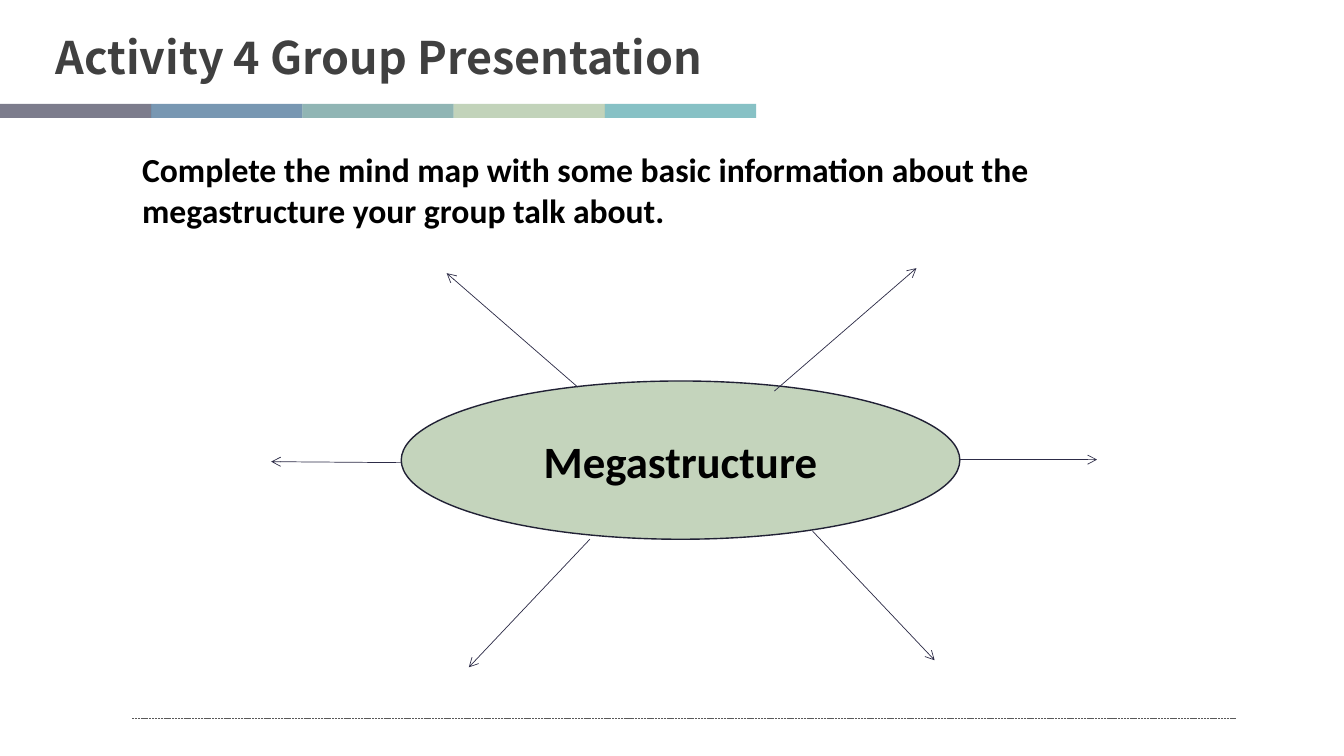
from dataclasses import dataclass

from lxml.etree import SubElement
from pptx import Presentation
from pptx.dml.color import RGBColor
from pptx.enum.dml import MSO_LINE as Dash
from pptx.enum.shapes import MSO_CONNECTOR as Connector, MSO_SHAPE as Shape
from pptx.enum.text import MSO_ANCHOR as Anchor, MSO_AUTO_SIZE as AutoSize, PP_ALIGN as Align
from pptx.oxml.ns import qn
from pptx.slide import Slide
from pptx.text.text import TextFrame
from pptx.util import Emu, Pt

EMU_PER_PX = 9144  # 100 px to the inch


@dataclass(frozen=True)
class TextStyle:
    font: str
    size: float
    color: str


@dataclass(frozen=True)
class Theme:
    title: TextStyle = TextStyle("Noto Sans CJK SC", 32, "404040")
    instruction: TextStyle = TextStyle("Calibri", 24, "000000")
    topic: TextStyle = TextStyle("Calibri", 32, "000000")
    bands: tuple[str, ...] = ("2D2C47", "265883", "4D8886", "9DB890", "3E9BA3")
    band_opacity: int = 62
    topic_fill: str = "C4D4BC"
    topic_edge: str = "212135"
    branch: str = "2D2C47"
    footer: str = "595959"
    thin: float = 0.5


@dataclass(frozen=True)
class Box:
    left: int
    top: int
    width: int
    height: int

    def emu(self) -> tuple[Emu, ...]:
        return tuple(px(v) for v in (self.left, self.top, self.width, self.height))


@dataclass(frozen=True)
class Segment:
    x1: int
    y1: int
    x2: int
    y2: int


THEME = Theme()
BAND = Box(0, 103, 150, 14)
FOOTER_RULE = Segment(131, 713, 1226, 713)
BRANCHES = (
    Segment(573, 384, 443, 271),
    Segment(398, 459, 269, 458),
    Segment(585, 535, 465, 662),
    Segment(768, 388, 909, 266),
    Segment(952, 456, 1088, 456),
    Segment(806, 527, 927, 655),
)


def px(value: int) -> Emu:
    return Emu(value * EMU_PER_PX)


def rgb(color: str) -> RGBColor:
    return RGBColor.from_string(color)


def write(frame: TextFrame, text: str, style: TextStyle, align: Align, anchor: Anchor) -> None:
    frame.word_wrap = True
    frame.auto_size = AutoSize.NONE
    frame.vertical_anchor = anchor
    paragraph = frame.paragraphs[0]
    paragraph.alignment = align
    paragraph.space_before = Pt(0)
    run = paragraph.add_run()
    run.text = text
    run.font.name = style.font
    run.font.size = Pt(style.size)
    run.font.bold = True
    run.font.color.rgb = rgb(style.color)


def fill_placeholder(slide: Slide, index: int, box: Box, text: str,
                     style: TextStyle, anchor: Anchor) -> None:
    holder = slide.placeholders[index]
    holder.left, holder.top, holder.width, holder.height = box.emu()
    properties = holder.text_frame.paragraphs[0]._p.get_or_add_pPr()
    properties.set("marL", "0")
    properties.set("indent", "0")
    SubElement(properties, qn("a:buNone"))
    write(holder.text_frame, text, style, Align.LEFT, anchor)


def add_bands(slide: Slide) -> None:
    for i, color in enumerate(THEME.bands):
        box = Box(BAND.left + i * BAND.width, BAND.top, BAND.width, BAND.height)
        band = slide.shapes.add_shape(Shape.RECTANGLE, *box.emu())
        band.shadow.inherit = False
        band.line.fill.background()
        band.fill.solid()
        band.fill.fore_color.rgb = rgb(color)
        tint = band._element.spPr.find(f"{qn('a:solidFill')}/{qn('a:srgbClr')}")
        SubElement(tint, qn("a:alpha"), val=str(THEME.band_opacity * 1000))


def add_line(slide: Slide, segment: Segment, color: str,
             dash: Dash | None = None, arrow: bool = False) -> None:
    ends = (px(v) for v in (segment.x1, segment.y1, segment.x2, segment.y2))
    line = slide.shapes.add_connector(Connector.STRAIGHT, *ends)
    line.line.color.rgb = rgb(color)
    line.line.width = Pt(THEME.thin)
    if dash is not None:
        line.line.dash_style = dash
    properties = line._element.spPr
    if arrow:
        SubElement(properties.find(qn("a:ln")), qn("a:tailEnd"), type="arrow")
    SubElement(properties, qn("a:effectLst"))


def add_topic(slide: Slide, box: Box, text: str) -> None:
    topic = slide.shapes.add_shape(Shape.OVAL, *box.emu())
    topic.shadow.inherit = False
    topic.fill.solid()
    topic.fill.fore_color.rgb = rgb(THEME.topic_fill)
    topic.line.color.rgb = rgb(THEME.topic_edge)
    topic.line.width = Pt(1)
    write(topic.text_frame, text, THEME.topic, Align.CENTER, Anchor.MIDDLE)


def main() -> None:
    deck = Presentation()
    deck.slide_width, deck.slide_height = px(1333), px(750)
    slide = deck.slides.add_slide(deck.slide_layouts[1])

    fill_placeholder(slide, 0, Box(45, 24, 925, 64), "Activity 4 Group Presentation",
                     THEME.title, Anchor.MIDDLE)
    fill_placeholder(slide, 1, Box(131, 143, 1095, 91),
                     "Complete the mind map with some basic information about the "
                     "megastructure your group talk about.",
                     THEME.instruction, Anchor.TOP)
    add_bands(slide)
    add_line(slide, FOOTER_RULE, THEME.footer, dash=Dash.SQUARE_DOT)
    add_topic(slide, Box(398, 378, 554, 157), "Megastructure")
    for branch in BRANCHES:
        add_line(slide, branch, THEME.branch, arrow=True)

    deck.save("out.pptx")


if __name__ == "__main__":
    main()
